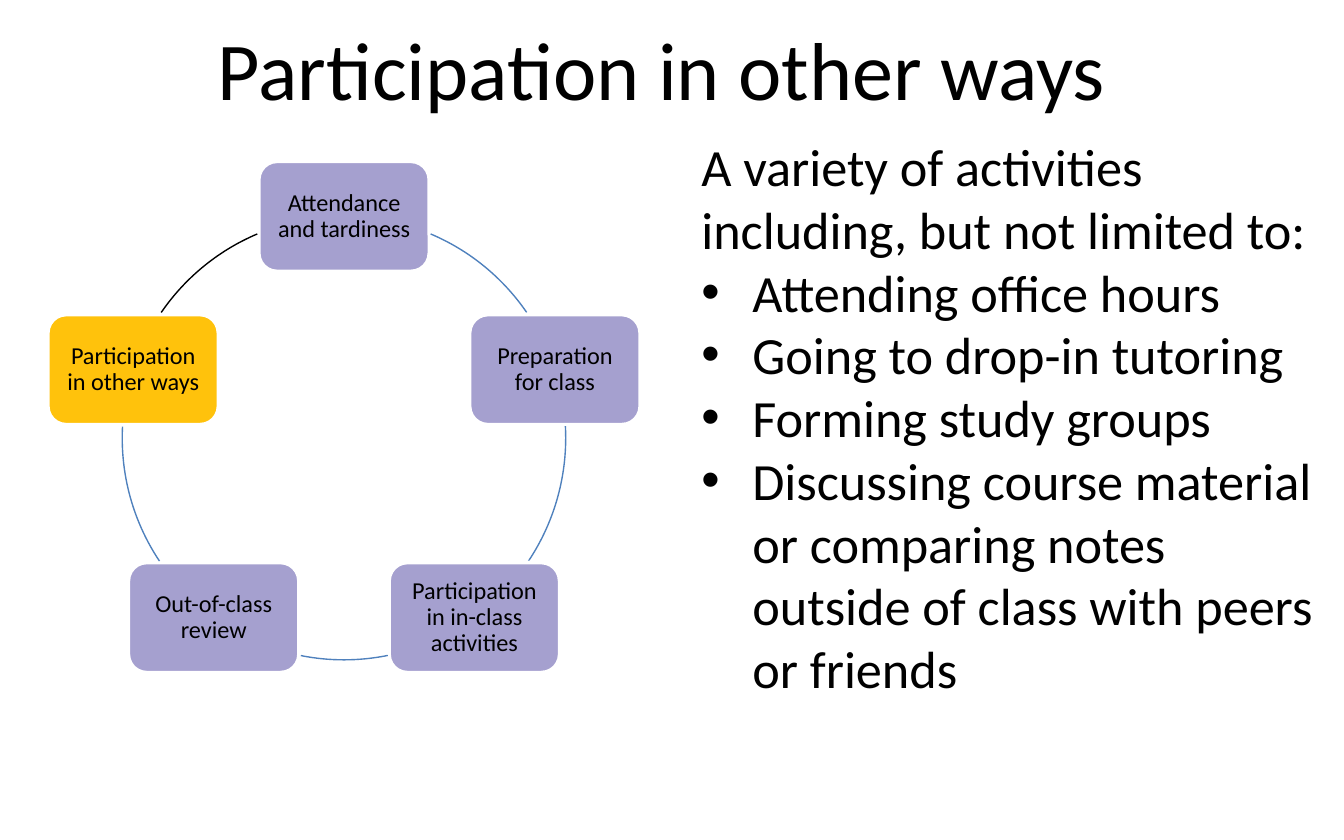
from math import cos, radians, sin

from lxml.etree import SubElement
from pptx import Presentation
from pptx.dml.color import RGBColor
from pptx.enum.shapes import MSO_SHAPE as Shape
from pptx.enum.text import MSO_ANCHOR as Anchor, PP_ALIGN as Align
from pptx.oxml.ns import qn
from pptx.util import Inches, Pt

COLORS = {"text": "000000", "node": "A5A0CF", "current": "FFC20C",
          "edge": "FFFFFF", "arc": "4F81BD"}


def color(name):
    return RGBColor.from_string(COLORS[name])


def style(paragraph, size):
    paragraph.font.name = "Calibri"
    paragraph.font.size = Pt(size)
    paragraph.font.color.rgb = color("text")


deck = Presentation()
deck.slide_width, deck.slide_height = Inches(10), Inches(6.25)
page = deck.slides.add_slide(deck.slide_layouts[6])

title = page.shapes.add_textbox(Inches(0.21), Inches(-0.02), Inches(9.43), Inches(1.04))
title.text_frame.word_wrap = True
title.text_frame.vertical_anchor = Anchor.MIDDLE
heading = title.text_frame.paragraphs[0]
heading.text = "Participation in other ways"
heading.alignment = Align.CENTER
style(heading, 44)

center_x, center_y, radius = 2.56, 3.26, 1.65
node_width, node_height = 1.27, 0.82
steps = [
    ("Attendance and tardiness", "node", "arc", 293, 325.5),
    ("Preparation for class", "node", "arc", 356.9, 33.7),
    ("Participation in in-class activities", "node", "arc", 78.6, 101.4),
    ("Out-of-class review", "node", "arc", 146.3, 183.1),
    ("Participation in other ways", "current", "text", 214.5, 247),
]
for index, (label, fill, line, start, end) in enumerate(steps):
    angle = radians(72 * index - 90)
    left = center_x + radius * cos(angle) - node_width / 2
    top = center_y + radius * sin(angle) - node_height / 2
    node = page.shapes.add_shape(Shape.ROUNDED_RECTANGLE, Inches(left), Inches(top),
                                 Inches(node_width), Inches(node_height))
    node.shadow.inherit = False
    node.fill.solid()
    node.fill.fore_color.rgb = color(fill)
    node.line.color.rgb = color("edge")
    node.line.width = Pt(2)
    frame = node.text_frame
    frame.word_wrap = True
    frame.vertical_anchor = Anchor.MIDDLE
    frame.margin_left = frame.margin_right = Inches(0.05)
    frame.margin_top = frame.margin_bottom = Inches(0.05)
    para = frame.paragraphs[0]
    para.text = label
    para.alignment = Align.CENTER
    para.line_spacing = 0.9
    style(para, 13)

    arc = page.shapes.add_shape(Shape.ARC, Inches(center_x - radius), Inches(center_y - radius),
                                Inches(2 * radius), Inches(2 * radius))
    arc.shadow.inherit = False
    arc.adjustments[0] = start * 0.6
    arc.adjustments[1] = end * 0.6
    arc.fill.background()
    arc.line.color.rgb = color(line)
    arc.line.width = Pt(0.75)

activities = [
    "Attending office hours",
    "Going to drop-in tutoring",
    "Forming study groups",
    "Discussing course material or comparing notes outside of class with peers or friends",
]
box = page.shapes.add_textbox(Inches(5.12), Inches(0.95), Inches(4.88), Inches(4.34))
box.text_frame.word_wrap = True
intro = box.text_frame.paragraphs[0]
intro.text = "A variety of activities including, but not limited to:"
style(intro, 28)
for activity in activities:
    para = box.text_frame.add_paragraph()
    para.text = activity
    properties = para._p.get_or_add_pPr()
    properties.set("marL", str(Inches(0.38)))
    properties.set("indent", str(Inches(-0.38)))
    SubElement(properties, qn("a:buFont")).set("typeface", "Arial")
    SubElement(properties, qn("a:buChar")).set("char", "•")
    style(para, 28)

deck.save("out.pptx")
